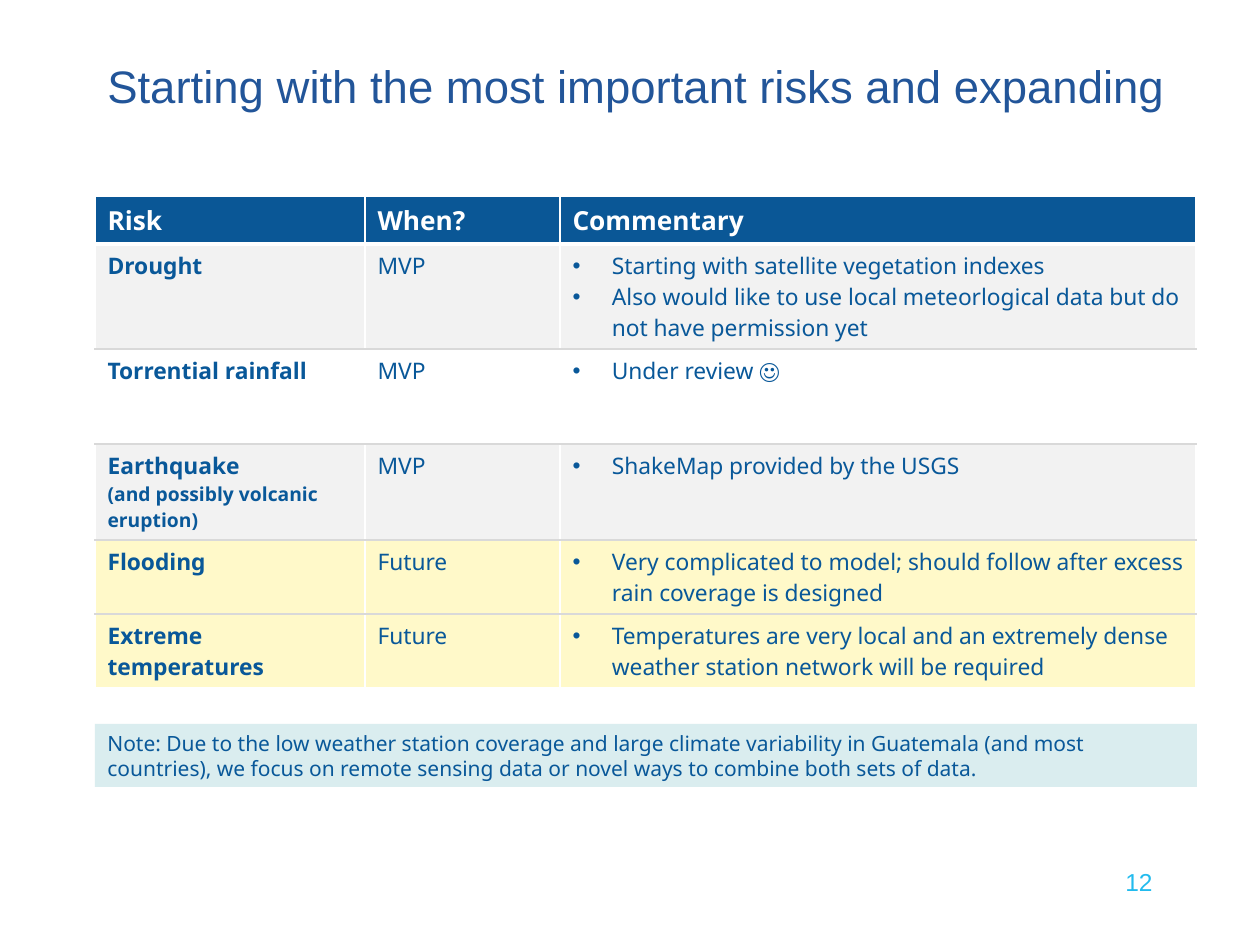
from lxml.etree import SubElement
from pptx import Presentation
from pptx.dml.color import RGBColor
from pptx.enum.shapes import MSO_SHAPE
from pptx.enum.text import MSO_ANCHOR, PP_ALIGN
from pptx.oxml.ns import qn
from pptx.util import Emu, Pt

PX = 914400 // 126
BLUE, WHITE, RULE = "095899", "FFFFFF", "D9D9D9"
HEADER, GREY, YELLOW, NOTE_FILL = "0A5796", "F2F2F2", "FFF9C9", "DAEDEF"

TITLE = "Starting with the most important risks and expanding"
PAGE_NUMBER = "12"
NOTE = ("Note: Due to the low weather station coverage and large climate variability in Guatemala "
        "(and most countries), we focus on remote sensing data or novel ways to combine both sets of data.")

HEADINGS = ["Risk", "When?", "Commentary"]
# risk, remark under it, when, commentary, row fill
RISKS = [
    ("Drought", None, "MVP",
     ["Starting with satellite vegetation indexes",
      "Also would like to use local meteorlogical data but do not have permission yet"], GREY),
    ("Torrential rainfall", None, "MVP", ["Under review ☺"], WHITE),
    ("Earthquake", "(and possibly volcanic eruption)", "MVP", ["ShakeMap provided by the USGS"], GREY),
    ("Flooding", None, "Future",
     ["Very complicated to model; should follow after excess rain coverage is designed"], YELLOW),
    ("Extreme temperatures", None, "Future",
     ["Temperatures are very local and an extremely dense weather station network will be required"],
     YELLOW),
]
COLUMN_WIDTHS = [270, 195, 636]
ROW_HEIGHTS = [48, 105, 95, 96, 74, 74]

TITLE_FONT = {"name": "Arial", "size": 26, "color": "225599"}
NUMBER_FONT = {"name": "Arial", "size": 14, "color": "22BBEE"}
HEADING_FONT = {"name": "Noto Sans", "size": 15, "color": WHITE, "bold": True}
BODY_FONT = {"name": "Noto Sans", "size": 13, "color": BLUE, "bold": False}
RISK_FONT = {**BODY_FONT, "bold": True}
REMARK_FONT = {**RISK_FONT, "size": 11}
NOTE_FONT = {**BODY_FONT, "size": 12}


def px(*lengths):
    return [Emu(length * PX) for length in lengths]


def paint(fill, color):
    fill.solid()
    fill.fore_color.rgb = RGBColor.from_string(color)


def add_bullet(paragraph):
    properties = paragraph._p.get_or_add_pPr()
    properties.set("marL", "285750")
    properties.set("indent", "-285750")
    SubElement(properties, qn("a:buFont"), typeface="Arial")
    SubElement(properties, qn("a:buChar"), char="•")


def write(frame, lines, bulleted=False):
    """Fill a text frame with (text, font values) lines, one paragraph each."""
    frame.word_wrap = True
    for index, (text, values) in enumerate(lines):
        paragraph = frame.add_paragraph() if index else frame.paragraphs[0]
        paragraph.alignment = PP_ALIGN.LEFT
        if bulleted:
            add_bullet(paragraph)
        span = paragraph.add_run()
        span.text = text
        for name, value in values.items():
            if name == "color":
                span.font.color.rgb = RGBColor.from_string(value)
            else:
                setattr(span.font, name, Pt(value) if name == "size" else value)


def set_borders(cell, top, bottom):
    """Draw white sides, and a top and bottom given as (colour, points)."""
    properties = cell._tc.get_or_add_tcPr()
    sides = {"lnL": (WHITE, 1), "lnR": (WHITE, 1), "lnT": top, "lnB": bottom}
    for index, (tag, (color, width)) in enumerate(sides.items()):
        line = properties.makeelement(qn(f"a:{tag}"), {"w": str(Pt(width))})
        SubElement(SubElement(line, qn("a:solidFill")), qn("a:srgbClr"), val=color)
        properties.insert(index, line)


def add_text(page, bounds, text, values):
    box = page.shapes.add_textbox(*px(*bounds))
    write(box.text_frame, [(text, values)])
    return box.text_frame


def add_risk_table(page):
    rows = [([[(heading, HEADING_FONT)] for heading in HEADINGS], HEADER)]
    for risk, remark, when, comments, fill in RISKS:
        risk_lines = [(risk, RISK_FONT)] + ([(remark, REMARK_FONT)] if remark else [])
        comment_lines = [(comment, BODY_FONT) for comment in comments]
        rows.append(([risk_lines, [(when, BODY_FONT)], comment_lines], fill))

    bounds = px(95, 196, sum(COLUMN_WIDTHS), sum(ROW_HEIGHTS))
    table = page.shapes.add_table(len(rows), len(HEADINGS), *bounds).table
    for column, width in zip(table.columns, px(*COLUMN_WIDTHS)):
        column.width = width
    for row, height in zip(table.rows, px(*ROW_HEIGHTS)):
        row.height = height

    edges = [(WHITE, 1), (WHITE, 3)] + [(RULE, 1)] * (len(rows) - 2) + [(WHITE, 1)]
    for r, (contents, fill) in enumerate(rows):
        for c, lines in enumerate(contents):
            cell = table.cell(r, c)
            paint(cell.fill, fill)
            set_borders(cell, edges[r], edges[r + 1])
            write(cell.text_frame, lines, bulleted=r > 0 and c == 2)


def add_note(page):
    note = page.shapes.add_shape(MSO_SHAPE.RECTANGLE, *px(95, 724, 1102, 63))
    note.shadow.inherit = False
    paint(note.fill, NOTE_FILL)
    note.line.fill.background()
    write(note.text_frame, [(NOTE, NOTE_FONT)])


def main():
    deck = Presentation()
    deck.slide_width, deck.slide_height = px(1260, 945)
    page = deck.slides.add_slide(deck.slide_layouts[6])
    title = add_text(page, (95, 61, 1149, 58), TITLE, TITLE_FONT)
    title.vertical_anchor = MSO_ANCHOR.BOTTOM
    number = add_text(page, (903, 861, 262, 43), PAGE_NUMBER, NUMBER_FONT)
    number.paragraphs[0].alignment = PP_ALIGN.RIGHT
    add_risk_table(page)
    add_note(page)
    deck.save("out.pptx")


if __name__ == "__main__":
    main()
